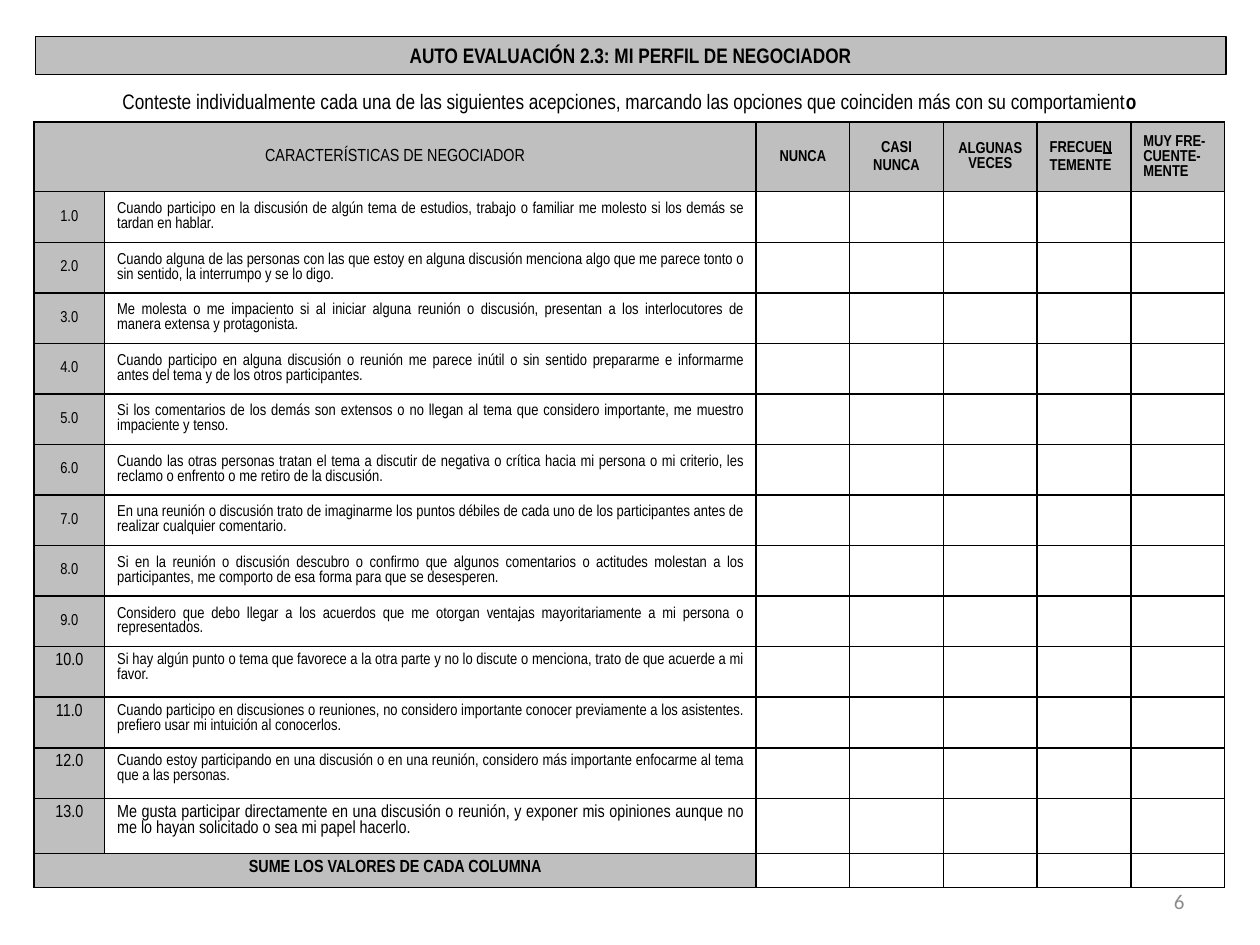
from pptx import Presentation
from pptx.dml.color import RGBColor
from pptx.enum.shapes import MSO_SHAPE
from pptx.enum.text import MSO_ANCHOR, MSO_AUTO_SIZE, PP_ALIGN
from pptx.util import Inches, Pt
from lxml import etree

LEFT, MID, RIGHT, JUST = PP_ALIGN.LEFT, PP_ALIGN.CENTER, PP_ALIGN.RIGHT, PP_ALIGN.JUSTIFY
TOP, CENTRE = MSO_ANCHOR.TOP, MSO_ANCHOR.MIDDLE
GROW, RECT = MSO_AUTO_SIZE.SHAPE_TO_FIT_TEXT, MSO_SHAPE.RECTANGLE
NS = "http://schemas.openxmlformats.org/drawingml/2006/main"

THEME = {
    "ink": RGBColor(0, 0, 0), "band": RGBColor(0xBF, 0xBF, 0xBF),
    "paper": RGBColor(255, 255, 255), "faint": RGBColor(0x8C, 0x8C, 0x8C),
    "font": "Arial Narrow", "page font": "Calibri",
    "title": 12, "large": 10, "small": 9, "tiny": 2,
}
LARGE, SMALL = THEME["large"], THEME["small"]

SCALE = [
    (["NUNCA"], MID), (["CASI", "NUNCA"], MID), (["ALGUNAS VECES"], MID),
    ([("FRECUE", "N"), "TEMENTE"], LEFT), (["MUY FRE-CUENTE-MENTE"], LEFT),
]
TRAITS = [
    "Cuando participo en la discusión de algún tema de estudios, trabajo o familiar me molesto si los demás se tardan en hablar.",
    "Cuando alguna de las personas con las que estoy en alguna discusión menciona algo que me parece tonto o sin sentido, la interrumpo y se lo digo.",
    "Me molesta o me impaciento si al iniciar alguna reunión o discusión, presentan a los interlocutores de manera extensa y protagonista.",
    "Cuando participo en alguna discusión o reunión me parece inútil o sin sentido prepararme e informarme antes del tema y de los otros participantes.",
    "Si los comentarios de los demás son extensos o no llegan al tema que considero importante, me muestro impaciente y tenso.",
    "Cuando las otras personas tratan el tema a discutir de negativa o crítica hacia mi persona o mi criterio, les reclamo o enfrento o me retiro de la discusión.",
    "En una reunión o discusión trato de imaginarme los puntos débiles de cada uno de los participantes antes de realizar cualquier comentario.",
    "Si en la reunión o discusión descubro o confirmo que algunos comentarios o actitudes molestan a los participantes, me comporto de esa forma para que se desesperen.",
    "Considero que debo llegar a los acuerdos que me otorgan ventajas mayoritariamente a mi persona o representados.",
    "Si hay algún punto o tema que favorece a la otra parte y no lo discute o menciona, trato de que acuerde a mi favor.",
    "Cuando participo en discusiones o reuniones, no considero importante conocer previamente a los asistentes. prefiero usar mi intuición al conocerlos.",
    "Cuando estoy participando en una discusión o en una reunión, considero más importante enfocarme al tema que a las personas.",
    "Me gusta participar directamente en una discusión o reunión, y exponer mis opiniones aunque no me lo hayan solicitado o sea mi papel hacerlo.",
]


def write(frame, lines, size, align=MID, bold=False):
    """Fill a frame with paragraphs; a tuple is one paragraph of several runs."""
    for i, line in enumerate(lines):
        para = frame.paragraphs[0] if i == 0 else frame.add_paragraph()
        parts = (line,) if isinstance(line, str) else line
        para.text = parts[0]
        for part in parts[1:]:
            para.add_run().text = part
        para.alignment = align
        para.space_before = Pt(size * 0.2)
        for run in para.runs:
            run.font.size, run.font.bold = Pt(size), bold
            run.font.name, run.font.color.rgb = THEME["font"], THEME["ink"]


def edge(cell, sides):
    """Rule the given sides of a cell and clear the others."""
    props = cell._tc.get_or_add_tcPr()
    for side in "LRTB":
        line = etree.SubElement(props, f"{{{NS}}}ln{side}", w=str(Pt(1)))
        if side in sides:
            paint = etree.SubElement(line, f"{{{NS}}}solidFill")
            etree.SubElement(paint, f"{{{NS}}}srgbClr", val=str(THEME["ink"]))
        else:
            etree.SubElement(line, f"{{{NS}}}noFill")


deck = Presentation()
deck.slide_width, deck.slide_height = Inches(10), Inches(7.5)
slide = deck.slides.add_slide(deck.slide_layouts[6])
shapes = slide.shapes

# Page number
page = shapes.add_textbox(Inches(7.17), Inches(6.95), Inches(2.33), Inches(0.4)).text_frame
page.word_wrap, page.vertical_anchor = True, CENTRE
page.text = "6"
para = page.paragraphs[0]
para.alignment = RIGHT
font = para.runs[0].font
font.size, font.name = Pt(THEME["title"]), THEME["page font"]
font.color.rgb = THEME["faint"]

# Table grid: spacer, header, traits, total
wide, num, trait = 9.45, 0.56, 5.17
cols = [num, trait] + [(wide - num - trait) / len(SCALE)] * len(SCALE)
rows = [0.13, 0.55] + [0.4] * (len(TRAITS) - 1) + [0.44, 0.26]
table = shapes.add_table(len(rows), len(cols), Inches(0.27), Inches(0.84),
                         Inches(wide), Inches(sum(rows))).table
table.first_row = table.horz_banding = False
for col, width in zip(table.columns, cols):
    col.width = Inches(width)
for row, height in zip(table.rows, rows):
    row.height = Inches(height)

last = len(rows) - 1
for r in range(len(rows)):
    for c in range(len(cols)):
        cell = table.cell(r, c)
        edge(cell, "LRTB" if r else "B")
        if r == 0:
            cell.fill.background()
            cell.margin_top = cell.margin_bottom = 0
        else:
            cell.fill.solid()
            shaded = r == 1 or c == 0 or (r == last and c == 1)
            cell.fill.fore_color.rgb = THEME["band" if shaded else "paper"]
        blank = THEME["tiny"] if r == 0 else SMALL
        etree.SubElement(cell.text_frame.paragraphs[0]._p, f"{{{NS}}}endParaRPr", sz=str(blank * 100))

table.cell(0, 0).merge(table.cell(0, len(cols) - 1))
for r, label, bold in ((1, "CARACTERÍSTICAS DE NEGOCIADOR", False),
                       (last, "SUME LOS VALORES DE CADA COLUMNA", True)):
    table.cell(r, 0).merge(table.cell(r, 1))
    write(table.cell(r, 0).text_frame, [label], LARGE, bold=bold)
table.cell(1, 0).vertical_anchor = CENTRE

for c, (lines, align) in enumerate(SCALE, 2):
    cell = table.cell(1, c)
    cell.vertical_anchor = CENTRE
    write(cell.text_frame, lines, SMALL, align, True)
table.cell(1, 5).text_frame.paragraphs[0].runs[1].font.underline = True

for n, text in enumerate(TRAITS, 1):
    mark, body = table.cell(n + 1, 0), table.cell(n + 1, 1)
    mark.vertical_anchor = body.vertical_anchor = CENTRE if n < 10 else TOP
    write(mark.text_frame, [f"{n}.0"], SMALL if n < 10 else LARGE)
    write(body.text_frame, [text], LARGE if n == len(TRAITS) else SMALL, JUST)

# Title bar and instruction
bar = shapes.add_shape(RECT, Inches(0.28), Inches(0.29), Inches(wide), Inches(0.3))
bar.shadow.inherit = False
bar.fill.solid()
bar.fill.fore_color.rgb = THEME["band"]
bar.line.color.rgb, bar.line.width = THEME["ink"], Pt(0.75)
guide = shapes.add_textbox(Inches(0.27), Inches(0.65), Inches(wide), Inches(0.3))
for shape, line, bold in (
    (bar, "AUTO EVALUACIÓN 2.3: MI PERFIL DE NEGOCIADOR", True),
    (guide, ("Conteste individualmente cada una de las siguientes acepciones, "
             "marcando las opciones que coinciden más con su comportamient", "o"), False),
):
    frame = shape.text_frame
    frame.word_wrap, frame.auto_size, frame.vertical_anchor = True, GROW, TOP
    write(frame, [line], THEME["title"], bold=bold)
guide.text_frame.paragraphs[0].runs[1].font.bold = True

deck.save("out.pptx")
